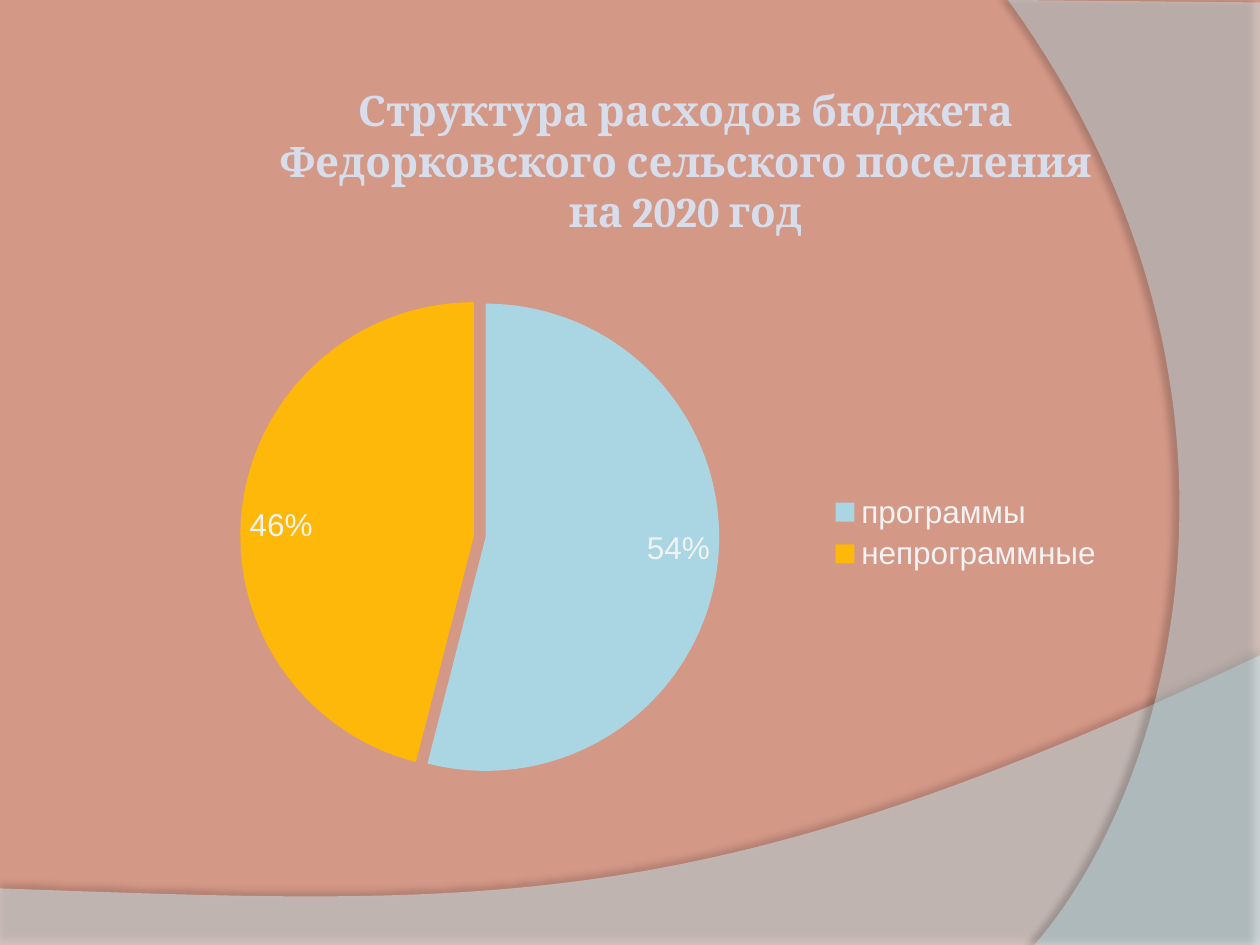
from lxml import etree
from pptx import Presentation
from pptx.chart.data import CategoryChartData
from pptx.dml.color import RGBColor
from pptx.enum.chart import XL_CHART_TYPE, XL_LABEL_POSITION, XL_LEGEND_POSITION
from pptx.enum.text import MSO_ANCHOR, MSO_AUTO_SIZE, PP_ALIGN
from pptx.oxml.ns import qn
from pptx.util import Cm, Pt

PIE = XL_CHART_TYPE.PIE
INSIDE_END = XL_LABEL_POSITION.INSIDE_END
RIGHT = XL_LEGEND_POSITION.RIGHT
MIDDLE = MSO_ANCHOR.MIDDLE
NO_AUTOFIT = MSO_AUTO_SIZE.NONE
CENTER = PP_ALIGN.CENTER

WIDTH, HEIGHT = 25.4, 19.05
TITLE_ONLY = 5
CURVE_STEPS = 60
UNITS_PER_CM = 1000


def color(value):
    return RGBColor.from_string(value)


def curve(start, control_1, control_2, end):
    """Points along a cubic curve, both ends included."""
    points = []
    for step in range(CURVE_STEPS + 1):
        t = step / CURVE_STEPS
        weights = ((1 - t) ** 3, 3 * t * (1 - t) ** 2, 3 * t ** 2 * (1 - t), t ** 3)
        points.append(tuple(
            sum(weight * value for weight, value in zip(weights, values))
            for values in zip(start, control_1, control_2, end)))
    return points


class SlideBuilder:
    title_font, title_size, title_color = "Cambria", 24, "D7DDEB"
    chart_font, chart_size, chart_color = "Arial", 18, "F2F2F2"

    def __init__(self, presentation, background):
        self.slide = presentation.slides.add_slide(
            presentation.slide_layouts[TITLE_ONLY])
        fill = self.slide.background.fill
        fill.solid()
        fill.fore_color.rgb = color(background)

    def wave(self, points, fill, opacity, shadow):
        """Translucent outline; shadow is opacity, blur, distance, direction."""
        scaled = [(round(x * UNITS_PER_CM), round(y * UNITS_PER_CM)) for x, y in points]
        builder = self.slide.shapes.build_freeform(
            *scaled[0], scale=Cm(1) / UNITS_PER_CM)
        builder.add_line_segments(scaled[1:], close=True)
        shape = builder.convert_to_shape()
        shape.fill.solid()
        shape.fill.fore_color.rgb = color(fill)
        shape.line.fill.background()
        shape.shadow.inherit = False
        properties = shape._element.spPr
        self.alpha(properties.find(qn("a:solidFill"))[0], opacity)

        shadow_opacity, blur, distance, direction = shadow
        outer = etree.SubElement(
            properties.find(qn("a:effectLst")), qn("a:outerShdw"),
            blurRad=str(Pt(blur)), dist=str(Pt(distance)),
            dir=str(direction * 60000), rotWithShape="0")
        black = etree.SubElement(outer, qn("a:srgbClr"), val="000000")
        self.alpha(black, shadow_opacity)

    def alpha(self, color_element, percent):
        etree.SubElement(color_element, qn("a:alpha"), val=str(percent * 1000))

    def title(self, lines, left, top, width, height):
        shape = self.slide.shapes.title
        # Bring the title in front of the waves
        self.slide.shapes._spTree.append(shape._element)
        shape.left, shape.top = Cm(left), Cm(top)
        shape.width, shape.height = Cm(width), Cm(height)
        frame = shape.text_frame
        frame.word_wrap = True
        frame.auto_size = NO_AUTOFIT
        frame.vertical_anchor = MIDDLE
        frame.margin_left = frame.margin_right = Cm(0.13)
        frame.margin_top = frame.margin_bottom = Cm(0.13)
        paragraph = frame.paragraphs[0]
        paragraph.alignment = CENTER
        for index, line in enumerate(lines):
            if index:
                paragraph.add_line_break()
            run = paragraph.add_run()
            run.text = line
            run.font.name = self.title_font
            run.font.size = Pt(self.title_size)
            run.font.bold = True
            run.font.color.rgb = color(self.title_color)

    def pie(self, slices, plot, explosion, left, top, width, height):
        """slices: name, value, colour; plot: x, y, w, h as shares of the chart."""
        data = CategoryChartData(number_format="0%")
        data.categories = [name for name, _, _ in slices]
        data.add_series("Series 1", [value for _, value, _ in slices])
        chart = self.slide.shapes.add_chart(
            PIE, Cm(left), Cm(top), Cm(width), Cm(height), data).chart
        chart.has_title = False
        chart.font.name = self.chart_font
        chart.font.size = Pt(self.chart_size)
        chart.font.color.rgb = color(self.chart_color)
        chart.has_legend = True
        chart.legend.position = RIGHT
        chart.legend.include_in_layout = False

        pie_plot = chart.plots[0]
        pie_plot.vary_by_categories = True
        pie_plot.has_data_labels = True
        labels = pie_plot.data_labels
        labels.show_value = True
        labels.show_percentage = False
        labels.number_format = "0%"
        labels.number_format_is_linked = False
        labels.position = INSIDE_END

        series = pie_plot.series[0]
        for index, (_, _, fill_color) in enumerate(slices):
            fill = series.points[index].format.fill
            fill.solid()
            fill.fore_color.rgb = color(fill_color)

        # Pull the first slice out; c:explosion goes before c:spPr
        exploded = etree.Element(qn("c:explosion"), val=str(explosion))
        first_point = series._element.find(qn("c:dPt"))
        first_point.find(qn("c:spPr")).addprevious(exploded)
        self.plot_layout(chart, plot)

    def plot_layout(self, chart, plot):
        plot_area = chart._chartSpace.find(".//" + qn("c:plotArea"))
        layout = plot_area.find(qn("c:layout"))
        if layout is None:
            layout = etree.Element(qn("c:layout"))
            plot_area.insert(0, layout)
        manual = etree.SubElement(layout, qn("c:manualLayout"))
        settings = [("layoutTarget", "inner"), ("xMode", "edge"), ("yMode", "edge")]
        for name, value in settings + list(zip("xywh", plot)):
            etree.SubElement(manual, qn("c:" + name), val=str(value))


def main():
    presentation = Presentation()
    presentation.slide_width, presentation.slide_height = Cm(WIDTH), Cm(HEIGHT)
    builder = SlideBuilder(presentation, "D49887")

    # Background waves: along the bottom, then down the right side
    bottom_edge = curve((WIDTH, 13.21), (14.2, 18.52), (9.93, 18.26), (0, 17.91))
    builder.wave(bottom_edge + [(0, HEIGHT), (WIDTH, HEIGHT)],
                 "D3F4FE", 45, (35, 4, 3.5, 270))
    side_edge = curve((20.85, HEIGHT), (23.75, 15.72), (25.86, 7.62), (20.32, 0))
    builder.wave(side_edge + [(WIDTH, 0.05), (WIDTH, HEIGHT)],
                 "CBF4FF", 40, (45, 4, 4, 180))

    # Title
    builder.title(["Структура расходов бюджета",
                   "Федорковского сельского поселения",
                   "на 2020 год"], 3.71, 2.13, 20.22, 2.21)

    # Spending structure
    builder.pie([("программы", 0.54, "A9D6E2"), ("непрограммные", 0.46, "FEB80A")],
                (0.13, 0.1, 0.47, 0.81), 5, 2.11, 4.93, 20.4, 11.63)

    presentation.save("out.pptx")


if __name__ == "__main__":
    main()
